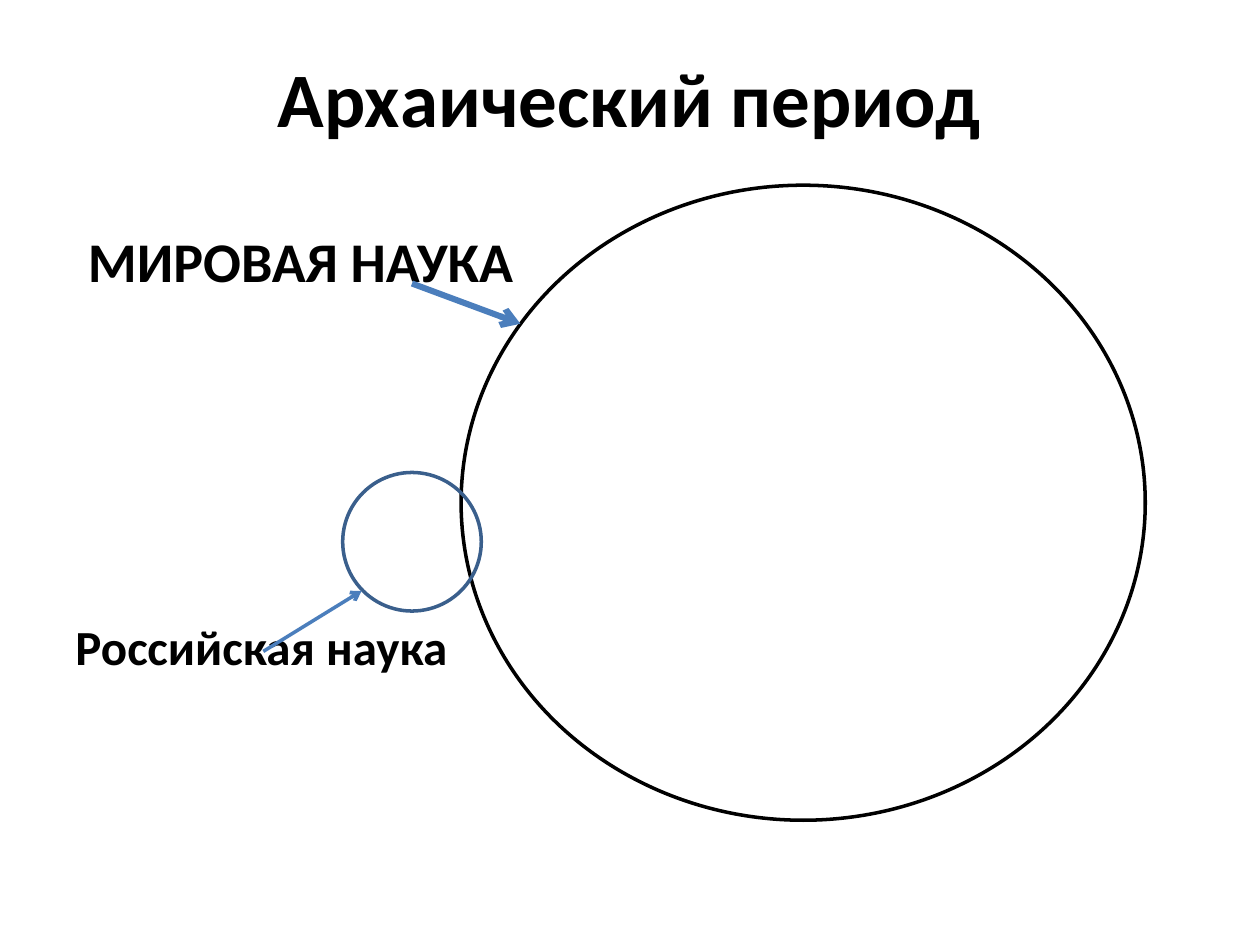
from dataclasses import dataclass

from pptx import Presentation
from pptx.dml.color import RGBColor
from pptx.enum.shapes import MSO_CONNECTOR as Connector, MSO_SHAPE as Shape
from pptx.enum.text import MSO_ANCHOR as Anchor, PP_ALIGN as Align
from pptx.oxml.ns import qn
from pptx.slide import Slide
from pptx.util import Inches, Pt
from lxml.etree import SubElement


def rgb(value):
    return RGBColor.from_string(value)


@dataclass
class Diagram:
    """Draws labels, circles and arrows on a slide in one style."""

    slide: Slide
    font: str = "Calibri"
    ink: str = "000000"
    arrow_color: str = "4B7EBC"

    def label(self, text, box, size, align=Align.LEFT, anchor=Anchor.TOP):
        frame = self.slide.shapes.add_textbox(*map(Inches, box)).text_frame
        frame.word_wrap = True
        frame.vertical_anchor = anchor
        paragraph = frame.paragraphs[0]
        paragraph.text = text
        paragraph.alignment = align
        font = paragraph.font
        font.name, font.size, font.bold = self.font, Pt(size), True
        font.color.rgb = rgb(self.ink)

    def circle(self, box, color):
        outline = self.slide.shapes.add_shape(Shape.OVAL, *map(Inches, box))
        outline.shadow.inherit = False
        outline.fill.background()
        outline.line.color.rgb = rgb(color)
        outline.line.width = Pt(2)

    def arrow(self, start, end, width):
        pointer = self.slide.shapes.add_connector(
            Connector.STRAIGHT, *map(Inches, start + end))
        pointer.line.color.rgb = rgb(self.arrow_color)
        pointer.line.width = Pt(width)
        SubElement(pointer.line._get_or_add_ln(), qn("a:tailEnd"), type="arrow")
        SubElement(pointer._element.spPr, qn("a:effectLst"))


def main():
    deck = Presentation()
    deck.slide_width, deck.slide_height = Inches(10), Inches(7.5)
    diagram = Diagram(deck.slides.add_slide(deck.slide_layouts[6]))

    diagram.label("Архаический период", (0.5, 0.3, 9, 0.93), 44,
                  Align.CENTER, Anchor.MIDDLE)
    diagram.label("МИРОВАЯ НАУКА", (0.6, 1.75, 3.9, 0.64), 32)
    diagram.label("Российская наука", (0.5, 4.84, 3.5, 0.57), 28)

    diagram.circle((3.66, 1.47, 5.43, 5.04), diagram.ink)
    diagram.circle((2.72, 3.75, 1.1, 1.1), "3A5F8C")

    diagram.arrow((3.27, 2.25), (4.13, 2.57), 3.5)
    diagram.arrow((2.09, 5.17), (2.87, 4.69), 2)

    deck.save("out.pptx")


if __name__ == "__main__":
    main()
